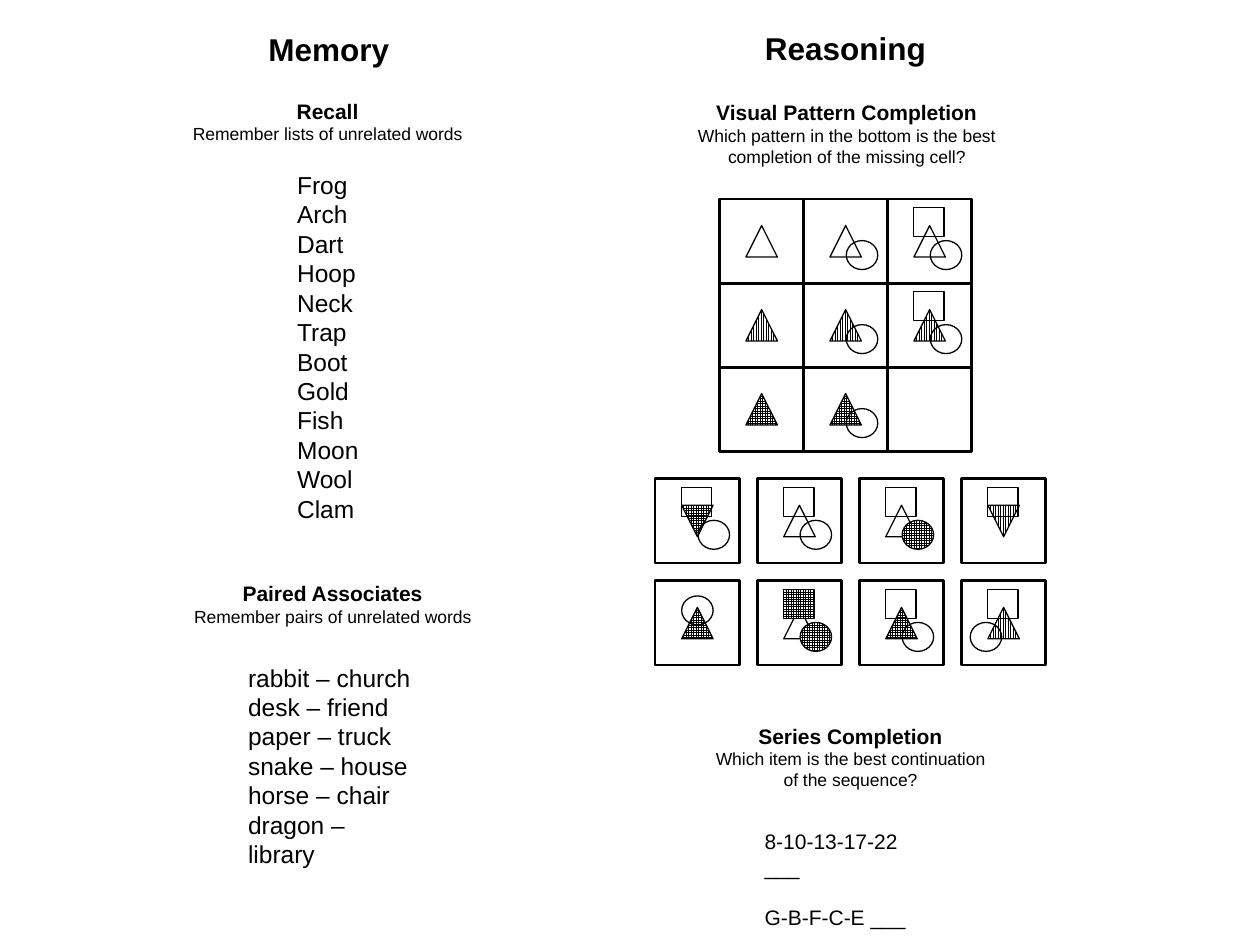
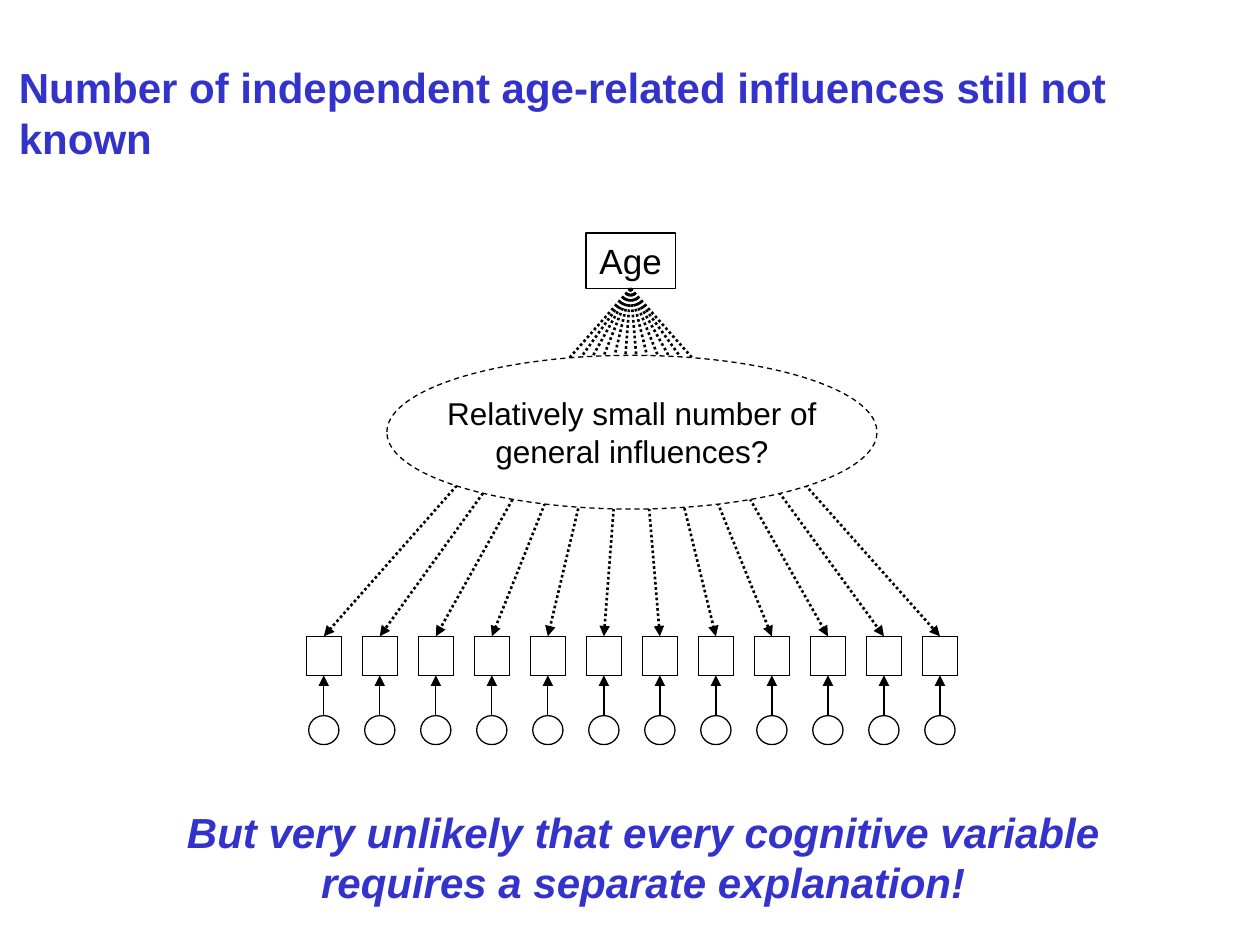
from lxml import etree
from pptx import Presentation
from pptx.dml.color import RGBColor
from pptx.enum.dml import MSO_LINE, MSO_PATTERN
from pptx.enum.shapes import MSO_CONNECTOR, MSO_SHAPE
from pptx.enum.text import MSO_ANCHOR, MSO_AUTO_SIZE, PP_ALIGN
from pptx.oxml.ns import qn
from pptx.util import Inches, Pt

BLACK = RGBColor(0x00, 0x00, 0x00)
WHITE = RGBColor(0xFF, 0xFF, 0xFF)
BLUE = RGBColor(0x33, 0x33, 0xCC)
FONT = "Arial"

# --- Content: tests slide ---
# Column title: text, centre x, top
COLUMN_TITLES = [("Memory", 2.61, 0.19), ("Reasoning", 6.71, 0.18)]

# Test: name, instructions, centre x, top
TESTS = [
    ("Recall", ["Remember lists of unrelated words"], 2.6, 0.73),
    ("Paired Associates", ["Remember pairs of unrelated words"], 2.64, 4.56),
    ("Visual Pattern Completion",
     ["Which pattern in the bottom is the best",
      "completion of the missing cell?"], 6.72, 0.74),
    ("Series Completion",
     ["Which item is the best continuation", "of the sequence?"], 6.75, 5.69),
]

# Items: lines, box, text size, space between lines
ITEMS = [
    (["Frog", "Arch", "Dart", "Hoop", "Neck", "Trap", "Boot", "Gold", "Fish",
      "Moon", "Wool", "Clam"], (2.26, 1.3, 0.9, 3.19), 14, 0),
    (["rabbit – church", "desk – friend", "paper – truck", "snake – house",
      "horse – chair", "dragon – library"], (1.87, 5.21, 1.55, 1.5), 14, 0),
    (["8-10-13-17-22 ___", "G-B-F-C-E ___"], (5.97, 6.53, 1.57, 0.7), 12, 14.4),
]

# Figures inside a matrix cell: preset, offset and size, rotation
FIGURES = {
    "triangle": (MSO_SHAPE.ISOSCELES_TRIANGLE, (0.21, 0.21, 0.25, 0.25), 0),
    "inverted": (MSO_SHAPE.ISOSCELES_TRIANGLE, (0.21, 0.21, 0.25, 0.25), 180),
    "circle": (MSO_SHAPE.OVAL, (0.34, 0.33, 0.25, 0.23), 0),
    "left circle": (MSO_SHAPE.OVAL, (0.07, 0.33, 0.25, 0.23), 0),
    "top circle": (MSO_SHAPE.OVAL, (0.21, 0.12, 0.25, 0.23), 0),
    "square": (MSO_SHAPE.RECTANGLE, (0.21, 0.07, 0.24, 0.23), 0),
}
STRIPES, GRID = MSO_PATTERN.LIGHT_VERTICAL, MSO_PATTERN.SMALL_GRID

# Each cell maps its figures, back to front, to a pattern
MATRIX = [
    [{"triangle": pattern},
     {"triangle": pattern, "circle": None},
     {"triangle": pattern, "circle": None, "square": None}]
    for pattern in (None, STRIPES, GRID)
]
MATRIX[2][2] = {}
OPTIONS = [
    [{"inverted": GRID, "circle": None, "square": None},
     {"triangle": None, "circle": None, "square": None},
     {"triangle": None, "circle": GRID, "square": None},
     {"inverted": STRIPES, "square": None}],
    [{"triangle": GRID, "top circle": None},
     {"triangle": None, "circle": GRID, "square": GRID},
     {"triangle": GRID, "circle": None, "square": None},
     {"triangle": STRIPES, "left circle": None, "square": None}],
]
CELL = 0.67
MATRIX_STEP = 2 / 3
OPTION_STEP = 0.81

# --- Content: influences slide ---
TITLE = "Number of independent age-related influences still not known"
CAUSE = "Age"
INFLUENCES = ["Relatively small number of", "general influences?"]
CONCLUSION = ("But very unlikely that every cognitive variable "
              "requires a separate explanation!")
VARIABLES = 12
FIRST_X, LAST_X = 2.43, 7.32


def inches(box):
    return [Inches(v) for v in box]


def write(tf, lines, size=14, bold=False, italic=False, color=BLACK,
          align=PP_ALIGN.LEFT, gap=0, wrap=True):
    """Add lines as paragraphs after any text already in the frame."""
    tf.word_wrap = wrap
    for i, line in enumerate(lines):
        p = tf.add_paragraph() if tf.text else tf.paragraphs[0]
        p.alignment = align
        if i and gap:
            p.space_before = Pt(gap)
        r = p.add_run()
        r.text = line
        f = r.font
        f.name, f.size, f.bold, f.italic = FONT, Pt(size), bold, italic
        f.color.rgb = color


def add_text(s, box, lines, **fmt):
    tf = s.shapes.add_textbox(*inches(box)).text_frame
    write(tf, lines, **fmt)
    return tf


def add_figure(s, preset, box, width=0.75, pattern=None):
    sp = s.shapes.add_shape(preset, *inches(box))
    sp.shadow.inherit = False
    sp.line.color.rgb = BLACK
    sp.line.width = Pt(width)
    if pattern is None:
        sp.fill.background()
    else:
        sp.fill.patterned()
        sp.fill.pattern = pattern
        sp.fill.fore_color.rgb = BLACK
        sp.fill.back_color.rgb = WHITE
    return sp


def add_cells(s, rows, left, top, step):
    for i, row in enumerate(rows):
        for j, figures in enumerate(row):
            x, y = left + j * step, top + i * step
            add_figure(s, MSO_SHAPE.RECTANGLE, (x, y, CELL, CELL), width=1.5)
            for name, pattern in figures.items():
                preset, (dx, dy, w, h), rotation = FIGURES[name]
                sp = add_figure(s, preset, (x + dx, y + dy, w, h),
                                pattern=pattern)
                sp.rotation = rotation


def add_arrow(s, start, end, width=0.75, dash=None):
    """Arrow from start (shape, site) to end (shape, site)."""
    c = s.shapes.add_connector(MSO_CONNECTOR.STRAIGHT, 0, 0, 0, 0)
    c.begin_connect(*start)
    c.end_connect(*end)
    c.line.color.rgb = BLACK
    c.line.width = Pt(width)
    if dash:
        c.line.dash_style = dash
    ln = c._element.spPr.find(qn("a:ln"))
    etree.SubElement(ln, qn("a:tailEnd"), type="triangle")
    etree.SubElement(c._element.spPr, qn("a:effectLst"))


def build_tests(prs):
    s = prs.slides.add_slide(prs.slide_layouts[6])

    # Matrix with its missing cell, then the answer options
    add_cells(s, MATRIX, 5.71, 1.58, MATRIX_STEP)
    add_cells(s, OPTIONS, 5.2, 3.8, OPTION_STEP)

    # Column titles, test headings and test items
    for text, centre, top in COLUMN_TITLES:
        add_text(s, (centre - 1, top, 2, 0.4), [text], size=18, bold=True,
                 align=PP_ALIGN.CENTER)
    for name, instructions, centre, top in TESTS:
        tf = add_text(s, (centre - 1.5, top, 3, 0.47), [name], size=12,
                      bold=True, align=PP_ALIGN.CENTER)
        write(tf, instructions, size=10, align=PP_ALIGN.CENTER)
    for lines, box, size, gap in ITEMS:
        add_text(s, box, lines, size=size, gap=gap)


def build_influences(prs):
    s = prs.slides.add_slide(prs.slide_layouts[5])

    # Title
    title = s.shapes.title
    title.left, title.top, title.width, title.height = inches(
        (0.05, 0.44, 9.9, 0.9))
    tf = title.text_frame
    tf.auto_size = MSO_AUTO_SIZE.NONE
    tf.vertical_anchor = MSO_ANCHOR.TOP
    write(tf, [TITLE], size=24, bold=True, color=BLUE)

    # Cause
    age = add_figure(s, MSO_SHAPE.RECTANGLE, (4.65, 1.85, 0.71, 0.44))
    write(age.text_frame, [CAUSE], size=20, align=PP_ALIGN.CENTER, wrap=False)

    # Observed variables, each with its own error term
    step = (LAST_X - FIRST_X) / (VARIABLES - 1)
    for i in range(VARIABLES):
        x = FIRST_X + i * step
        variable = add_figure(s, MSO_SHAPE.RECTANGLE, (x, 5.05, 0.28, 0.31))
        error = add_figure(s, MSO_SHAPE.OVAL, (x + 0.02, 5.68, 0.24, 0.23))
        add_arrow(s, (error, 0), (variable, 2))
        add_arrow(s, (age, 2), (variable, 0), width=1.5,
                  dash=MSO_LINE.ROUND_DOT)

    # General influences, over the dotted arrows
    oval = add_figure(s, MSO_SHAPE.OVAL, (3.07, 2.82, 3.89, 1.22))
    oval.fill.solid()
    oval.fill.fore_color.rgb = WHITE
    oval.line.dash_style = MSO_LINE.DASH
    oval.text_frame.vertical_anchor = MSO_ANCHOR.MIDDLE
    write(oval.text_frame, INFLUENCES, size=18, align=PP_ALIGN.CENTER,
          wrap=False)

    # Conclusion
    add_text(s, (1.31, 6.35, 7.59, 0.9), [CONCLUSION], size=24, bold=True,
             italic=True, color=BLUE, align=PP_ALIGN.CENTER)


def main():
    prs = Presentation()
    prs.slide_width, prs.slide_height = Inches(10), Inches(7.5)
    build_tests(prs)
    build_influences(prs)
    prs.save("out.pptx")


if __name__ == "__main__":
    main()
